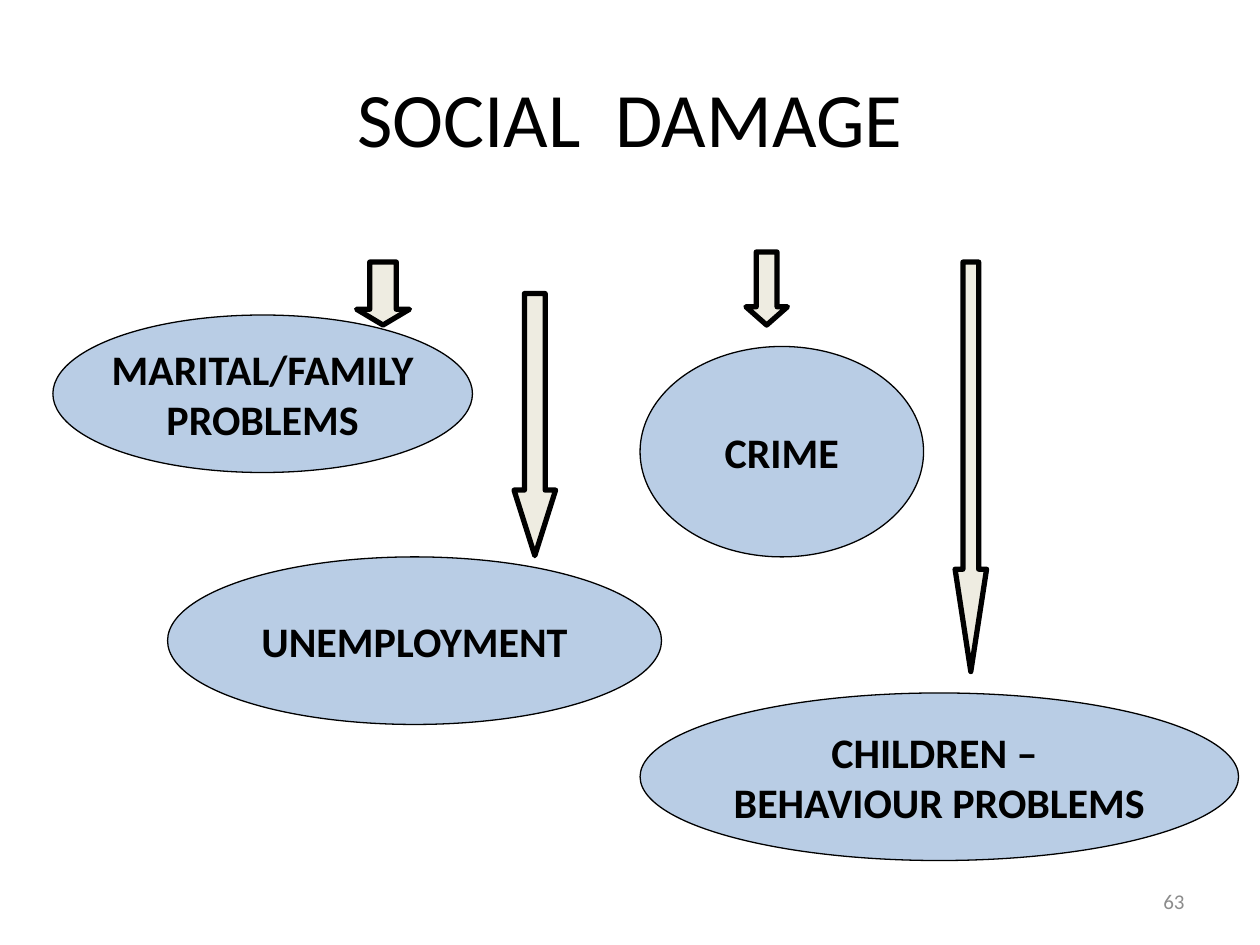
from dataclasses import dataclass

from pptx import Presentation
from pptx.dml.color import RGBColor
from pptx.enum.shapes import MSO_SHAPE
from pptx.enum.text import MSO_ANCHOR, PP_ALIGN
from pptx.util import Inches, Pt


@dataclass(frozen=True)
class Theme:
    face: str = "Calibri"
    ink: str = "000000"
    muted: str = "8C8C8C"
    oval: str = "B9CDE5"
    arrow: str = "EEECE1"
    title: int = 44
    label: int = 24
    number: int = 12
    thin: float = 0.75
    thick: float = 3


THEME = Theme()

# Each box is left, top, width, height in inches.
OVALS = [
    ((0.42, 2.5, 3.33, 1.25), ["MARITAL/FAMILY", "PROBLEMS"]),
    ((1.33, 4.42, 3.92, 1.33), ["UNEMPLOYMENT"]),
    ((5.08, 2.75, 2.25, 1.67), ["CRIME"]),
    ((5.08, 5.5, 4.75, 1.33), ["CHILDREN – ", "BEHAVIOUR PROBLEMS"]),
]
ARROWS = [
    (2.83, 2.08, 0.42, 0.5),
    (4.08, 2.33, 0.33, 2.08),
    (5.92, 2, 0.33, 0.58),
    (7.58, 2.08, 0.25, 3.25),
]


def place(box):
    return [Inches(side) for side in box]


def write(shape, lines, size, color=THEME.ink, align=PP_ALIGN.CENTER,
          bold=False, wrap=True):
    frame = shape.text_frame
    frame.word_wrap = wrap
    frame.vertical_anchor = MSO_ANCHOR.MIDDLE
    frame.text = "\n".join(lines)
    for para in frame.paragraphs:
        para.alignment = align
        font = para.font
        font.name, font.size, font.bold = THEME.face, Pt(size), bold
        font.color.rgb = RGBColor.from_string(color)


def add_text(slide, box, text, size, **style):
    write(slide.shapes.add_textbox(*place(box)), [text], size, **style)


def add_form(slide, kind, box, fill, width):
    shape = slide.shapes.add_shape(kind, *place(box))
    shape.shadow.inherit = False
    shape.fill.solid()
    shape.fill.fore_color.rgb = RGBColor.from_string(fill)
    shape.line.color.rgb = RGBColor.from_string(THEME.ink)
    shape.line.width = Pt(width)
    return shape


def add_oval(slide, box, lines):
    oval = add_form(slide, MSO_SHAPE.OVAL, box, THEME.oval, THEME.thin)
    write(oval, lines, THEME.label, bold=True, wrap=False)


def add_arrow(slide, box):
    """Add a down arrow whose head takes a quarter of its height."""
    arrow = add_form(slide, MSO_SHAPE.DOWN_ARROW, box, THEME.arrow, THEME.thick)
    width, height = box[2:]
    arrow.adjustments[0] = 0.5
    arrow.adjustments[1] = height / 4 / width


def main():
    deck = Presentation()
    deck.slide_width, deck.slide_height = Inches(10), Inches(7.5)
    slide = deck.slides.add_slide(deck.slide_layouts[6])
    add_text(slide, (0.5, 0.3, 9, 1.25), "SOCIAL  DAMAGE", THEME.title)
    add_text(slide, (7.17, 6.95, 2.33, 0.4), "63", THEME.number,
             color=THEME.muted, align=PP_ALIGN.RIGHT)
    for box, lines in OVALS:
        add_oval(slide, box, lines)
    for box in ARROWS:
        add_arrow(slide, box)
    deck.save("out.pptx")


if __name__ == "__main__":
    main()
